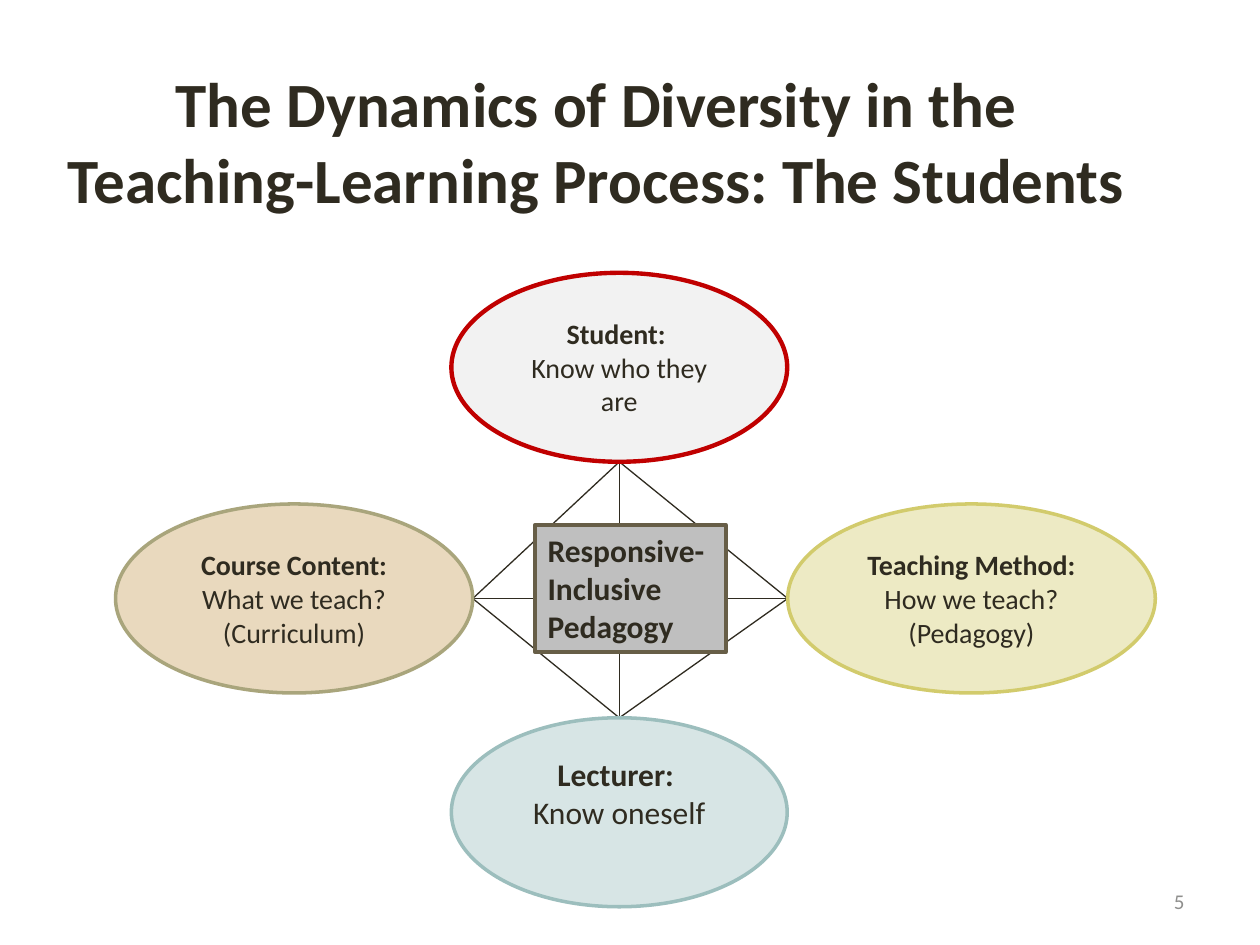
from dataclasses import dataclass
from itertools import combinations

from lxml.etree import SubElement
from pptx import Presentation
from pptx.dml.color import RGBColor
from pptx.enum.shapes import MSO_CONNECTOR, MSO_SHAPE
from pptx.enum.text import MSO_ANCHOR, MSO_AUTO_SIZE, PP_ALIGN
from pptx.oxml.ns import qn
from pptx.util import Cm, Pt


@dataclass(frozen=True)
class Theme:
    """Font, type sizes and colours of the slide."""
    font: str = "Calibri"
    title_size: int = 36
    large_size: int = 18
    body_size: int = 16
    number_size: int = 12
    ink: str = "2F2B20"
    muted: str = "8F8F8D"
    center: tuple = ("BFBFBF", "675E47", 2.25)
    student: tuple = ("F2F2F2", "C00000", 2.5)
    lecturer: tuple = ("D7E5E5", "9CBEBD", 2)
    course: tuple = ("E9D9BE", "A9A57C", 2)
    method: tuple = ("EDEAC4", "D2CB6C", 2)


THEME = Theme()


@dataclass(frozen=True)
class Box:
    """A rectangle in centimetres."""
    left: float
    top: float
    width: float
    height: float

    def within(self, outer):
        """Return this box moved into the coordinates of the outer box."""
        return Box(outer.left + self.left, outer.top + self.top, self.width, self.height)

    def lengths(self):
        """Return left, top, width and height as slide lengths."""
        return Cm(self.left), Cm(self.top), Cm(self.width), Cm(self.height)


def format_paragraph(paragraph, size, color=THEME.ink, bold=False, alignment=PP_ALIGN.CENTER):
    """Apply alignment and font to every run of a paragraph."""
    paragraph.alignment = alignment
    for run in paragraph.runs:
        run.font.name = THEME.font
        run.font.size = Pt(size)
        run.font.bold = bold
        run.font.color.rgb = RGBColor.from_string(color)


def add_title(slide, box, text):
    """Fill and place the title placeholder."""
    title = slide.shapes.title
    title.left, title.top, title.width, title.height = box.lengths()
    text_frame = title.text_frame
    text_frame.text = text
    text_frame.auto_size = MSO_AUTO_SIZE.NONE
    text_frame.vertical_anchor = MSO_ANCHOR.MIDDLE
    text_frame.margin_bottom = Cm(1.68)
    format_paragraph(text_frame.paragraphs[0], THEME.title_size, bold=True)


def add_panel(shapes, preset, box, style, text):
    """Add a filled and outlined shape with text and return it."""
    fill, line, weight = style
    shape = shapes.add_shape(preset, *box.lengths())
    shape.shadow.inherit = False
    shape.fill.solid()
    shape.fill.fore_color.rgb = RGBColor.from_string(fill)
    shape.line.color.rgb = RGBColor.from_string(line)
    shape.line.width = Pt(weight)
    shape.text_frame.text = text
    return shape


def add_oval(shapes, box, style, text, size, bottom_margin=0.13):
    """Add an ellipse with a bold heading above plain lines."""
    text_frame = add_panel(shapes, MSO_SHAPE.OVAL, box, style, text).text_frame
    text_frame.word_wrap = True
    text_frame.vertical_anchor = MSO_ANCHOR.MIDDLE
    text_frame.margin_bottom = Cm(bottom_margin)
    for index, paragraph in enumerate(text_frame.paragraphs):
        format_paragraph(paragraph, size, bold=index == 0)


def add_center(shapes, box, text):
    """Add the central rectangle with left-aligned bold text."""
    text_frame = add_panel(shapes, MSO_SHAPE.RECTANGLE, box, THEME.center, text).text_frame
    text_frame.word_wrap = False
    text_frame.vertical_anchor = MSO_ANCHOR.TOP
    for paragraph in text_frame.paragraphs:
        format_paragraph(paragraph, THEME.large_size, bold=True, alignment=PP_ALIGN.LEFT)


def add_link(shapes, start, end):
    """Connect two points with a thin line."""
    points = (Cm(value) for value in (*start, *end))
    connector = shapes.add_connector(MSO_CONNECTOR.STRAIGHT, *points)
    connector.line.color.rgb = RGBColor.from_string(THEME.ink)
    connector.line.width = Pt(0.75)
    SubElement(connector._element.spPr, qn("a:effectLst"))


def add_diagram(slide, box):
    """Draw four linked ovals around the central rectangle."""
    shapes = slide.shapes.add_group_shape().shapes
    height = 3.81
    side_top = 4.66
    student = Box(6.77, 0, 6.77, height).within(box)
    lecturer = Box(6.77, box.height - height, 6.77, height).within(box)
    course = Box(0, side_top, 7.2, height).within(box)
    method = Box(box.width - 7.41, side_top, 7.41, height).within(box)

    middle = student.left + student.width / 2
    side_middle = course.top + height / 2
    anchors = [
        (middle, student.top + height),
        (course.left + course.width, side_middle),
        (method.left, side_middle),
        (middle, lecturer.top),
    ]
    for start, end in combinations(anchors, 2):
        add_link(shapes, start, end)

    add_center(shapes, Box(8.46, 5.08, 3.84, 2.57).within(box),
               "Responsive-\nInclusive\nPedagogy")
    add_oval(shapes, student, THEME.student, "Student: \nKnow who they are", THEME.body_size)
    add_oval(shapes, lecturer, THEME.lecturer, "Lecturer: \nKnow oneself",
             THEME.large_size, bottom_margin=0.9)
    add_oval(shapes, course, THEME.course,
             "Course Content:\nWhat we teach?\n(Curriculum)", THEME.body_size)
    add_oval(shapes, method, THEME.method,
             "Teaching Method:\nHow we teach?\n(Pedagogy)", THEME.body_size)


def add_number(slide, box, text):
    """Add the right-aligned slide number."""
    text_frame = slide.shapes.add_textbox(*box.lengths()).text_frame
    text_frame.text = text
    text_frame.word_wrap = True
    text_frame.vertical_anchor = MSO_ANCHOR.MIDDLE
    format_paragraph(text_frame.paragraphs[0], THEME.number_size, THEME.muted,
                     alignment=PP_ALIGN.RIGHT)


def main():
    """Build and save the presentation."""
    presentation = Presentation()
    presentation.slide_width = Cm(25.4)
    presentation.slide_height = Cm(19.05)
    slide = presentation.slides.add_slide(presentation.slide_layouts[5])
    add_title(slide, Box(0.97, 2.34, 22.1, 2.54),
              "The Dynamics of Diversity in the Teaching-Learning Process: The Students")
    add_diagram(slide, Box(2.33, 5.5, 20.96, 12.78))
    add_number(slide, Box(18.2, 17.65, 5.93, 1.02), "5")
    presentation.save("out.pptx")


if __name__ == "__main__":
    main()
